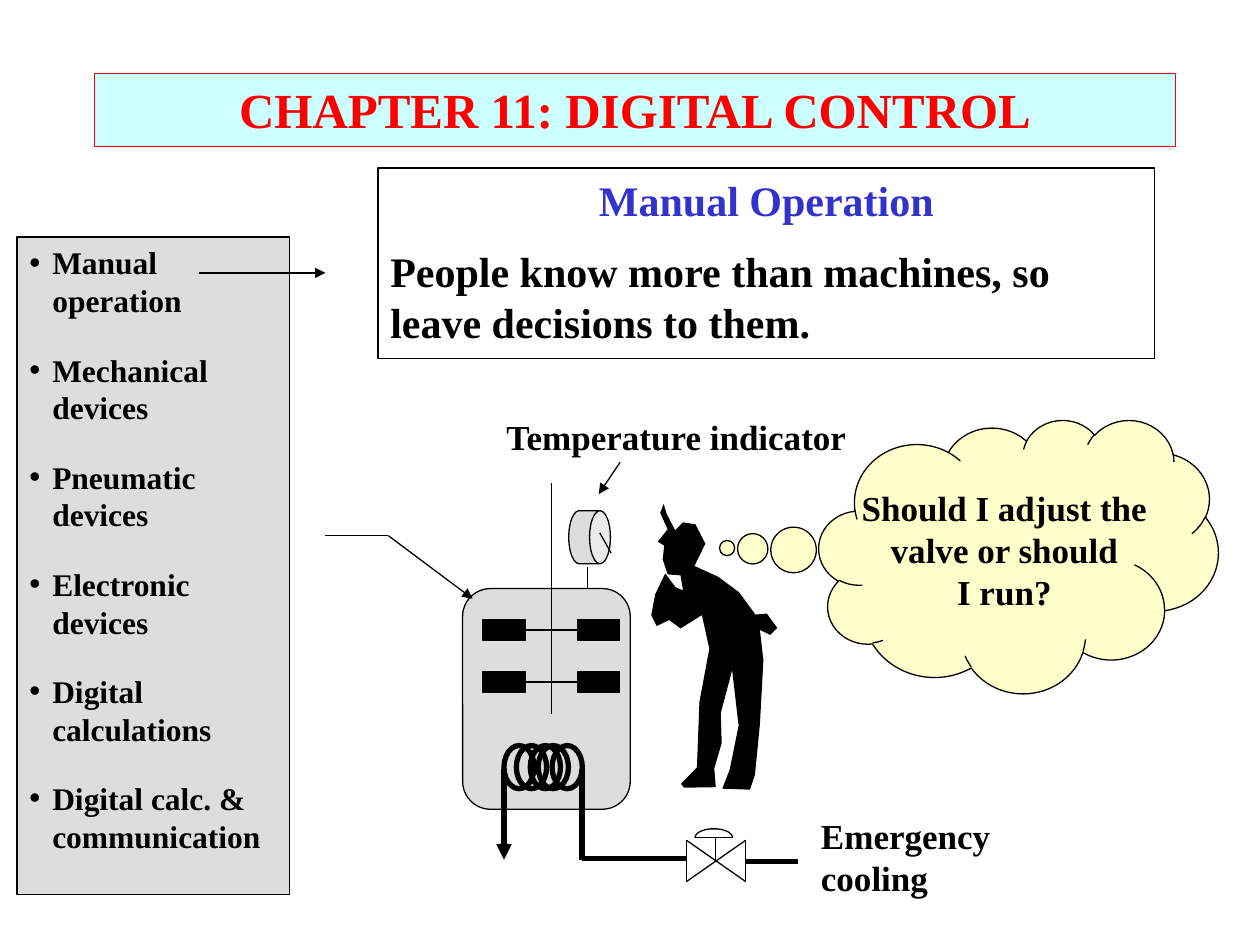
from itertools import combinations
from math import cos, pi, sin
from typing import NamedTuple, Optional

from lxml.etree import SubElement
from pptx import Presentation
from pptx.dml.color import RGBColor
from pptx.enum.shapes import MSO_CONNECTOR, MSO_SHAPE
from pptx.enum.text import MSO_ANCHOR, MSO_AUTO_SIZE, PP_ALIGN
from pptx.oxml.ns import qn
from pptx.util import Cm, Pt

BLACK = RGBColor(0x00, 0x00, 0x00)
RED = RGBColor(0xFF, 0x00, 0x00)
BLUE = RGBColor(0x33, 0x33, 0xCC)
CYAN = RGBColor(0xCC, 0xFF, 0xFF)
GREY = RGBColor(0xDD, 0xDD, 0xDD)
YELLOW = RGBColor(0xFF, 0xFF, 0xCC)
FONT = "Times New Roman"
THIN, MEDIUM, THICK = 0.75, 1.5, 3


class Box(NamedTuple):
    left: float
    top: float
    width: float
    height: float


class Stroke(NamedTuple):
    start: tuple[float, float]
    end: tuple[float, float]
    weight: float = THIN
    arrow: bool = False


class Line(NamedTuple):
    text: str
    color: RGBColor = BLACK
    alignment: PP_ALIGN = PP_ALIGN.LEFT


METHODS = ("Manual operation", "Mechanical devices", "Pneumatic devices",
           "Electronic devices", "Digital calculations", "Digital calc. & communication")
COIL_LEFTS = (10.41, 10.16, 10.69, 10.85, 11.13)
PADDLE_TOPS = (12.49, 13.54)
COIL_OUTLET, COIL_INLET, COIL_MIDDLE, COIL_END = 10.16, 11.73, 15.51, 17.33
VALVE_LEFT, VALVE_RIGHT, VALVE_TOP, VALVE_BOTTOM = 13.84, 15.03, 16.94, 17.77
VALVE_CORNERS = ((VALVE_LEFT, VALVE_TOP), (VALVE_LEFT, VALVE_BOTTOM),
                 (VALVE_RIGHT, VALVE_TOP), (VALVE_RIGHT, VALVE_BOTTOM))
VALVE_SIDES = tuple(Stroke(start, end) for start, end in combinations(VALVE_CORNERS, 2)
                    if start[1] != end[1])
DOME_CENTER, DOME_BASE, DOME_RADIUS, DOME_HEIGHT, DOME_STEPS = 14.39, 16.89, 0.38, 0.18, 16
BEND = (7.83, 10.8)
STROKES = (
    Stroke((4.02, 5.5), (6.56, 5.5), MEDIUM, True),
    Stroke((11.12, 9.74), (11.12, 14.39)),
    Stroke(BEND, (9.53, 12.07), THIN, True),
    Stroke(BEND, (6.56, BEND[1])),
    Stroke((COIL_OUTLET, COIL_MIDDLE), (COIL_OUTLET, COIL_END), THICK, True),
    Stroke((COIL_INLET, COIL_MIDDLE), (COIL_INLET, COIL_END), THICK),
    *VALVE_SIDES,
    Stroke((14.43, 17.35), (14.43, DOME_BASE)),
    Stroke((14.01, DOME_BASE), (14.77, DOME_BASE)),
    Stroke((COIL_INLET, 17.3), (VALVE_LEFT, 17.3), THICK),
    Stroke((VALVE_RIGHT, 17.37), (16.08, 17.37), THICK),
    Stroke((11.85, 11.43), (11.85, 11.86)),
    Stroke((12.09, 10.74), (12.32, 11.15)),
    Stroke((12.5, 9.32), (12.07, 9.96), THIN, True),
)
OUTLINE_UNIT = Cm(0.01)
OPERATOR = (
    (1361, 1069), (1344, 1036), (1338, 1016), (1331, 1034), (1346, 1067), (1326, 1092),
    (1339, 1100), (1336, 1128), (1346, 1158), (1372, 1160), (1377, 1190), (1362, 1184),
    (1341, 1156), (1321, 1198), (1313, 1240), (1324, 1262), (1349, 1250), (1372, 1267),
    (1415, 1240), (1430, 1308), (1410, 1415), (1405, 1547), (1373, 1580), (1379, 1588),
    (1443, 1587), (1440, 1549), (1455, 1498), (1453, 1438), (1476, 1351), (1489, 1463),
    (1471, 1552), (1456, 1590), (1512, 1592), (1522, 1562), (1532, 1460), (1539, 1331),
    (1532, 1270), (1553, 1280), (1567, 1266), (1546, 1237), (1523, 1239), (1490, 1194),
    (1448, 1163), (1400, 1141), (1422, 1096), (1402, 1057), (1377, 1053),
)


def place(shape, box: Box) -> None:
    shape.left, shape.top, shape.width, shape.height = (Cm(value) for value in box)


def paint(shape, fill: Optional[RGBColor], line: Optional[RGBColor] = BLACK,
          weight: float = THIN) -> None:
    if fill is None:
        shape.fill.background()
    else:
        shape.fill.solid()
        shape.fill.fore_color.rgb = fill
    if line is None:
        shape.line.fill.background()
    else:
        shape.line.color.rgb = line
        shape.line.width = Pt(weight)


def draw_shape(slide, kind: MSO_SHAPE, box: Box, fill: Optional[RGBColor] = None,
               weight: float = THIN, rotation: float = 0):
    shape = slide.shapes.add_shape(kind, *(Cm(value) for value in box))
    shape.shadow.inherit = False
    shape.rotation = rotation
    paint(shape, fill, weight=weight)
    return shape


def draw_stroke(slide, stroke: Stroke):
    points = (Cm(value) for value in (*stroke.start, *stroke.end))
    connector = slide.shapes.add_connector(MSO_CONNECTOR.STRAIGHT, *points)
    connector.line.color.rgb = BLACK
    connector.line.width = Pt(stroke.weight)
    properties = connector.element.spPr
    if stroke.arrow:
        SubElement(properties.find(qn("a:ln")), qn("a:tailEnd"), type="triangle")
    SubElement(properties, qn("a:effectLst"))
    return connector


def draw_outline(slide, points, closed: bool, fill: Optional[RGBColor],
                 line: Optional[RGBColor]) -> None:
    builder = slide.shapes.build_freeform(*points[0], scale=OUTLINE_UNIT)
    builder.add_line_segments(points[1:], close=closed)
    shape = builder.convert_to_shape()
    shape.shadow.inherit = False
    paint(shape, fill, line)


def write(shape, lines: list[Line], size: float, gap: float = 0, wrap: bool = True,
          anchor: MSO_ANCHOR = MSO_ANCHOR.TOP) -> None:
    frame = shape.text_frame
    frame.auto_size = MSO_AUTO_SIZE.NONE
    frame.word_wrap = wrap
    frame.vertical_anchor = anchor
    for index, line in enumerate(lines):
        paragraph = frame.add_paragraph() if index else frame.paragraphs[0]
        paragraph.text = line.text
        paragraph.alignment = line.alignment
        paragraph.space_before = Pt(gap if index else 0)
        paragraph.font.name = FONT
        paragraph.font.size = Pt(size)
        paragraph.font.bold = True
        paragraph.font.color.rgb = line.color


def draw_label(slide, box: Box, text: str) -> None:
    label = slide.shapes.add_textbox(*(Cm(value) for value in box))
    write(label, [Line(text)], 20)


def draw_paddles(slide, top: float) -> None:
    left, right = (draw_shape(slide, MSO_SHAPE.RECTANGLE, Box(x, top, 0.85, 0.42), BLACK)
                   for x in (9.74, 11.64))
    shaft = draw_stroke(slide, Stroke((10.59, top + 0.21), (11.64, top + 0.21)))
    shaft.begin_connect(left, 3)
    shaft.end_connect(right, 1)


def main() -> None:
    presentation = Presentation()
    presentation.slide_width, presentation.slide_height = Cm(25.4), Cm(19.05)
    slide = presentation.slides.add_slide(presentation.slide_layouts[1])

    title, methods = slide.shapes.title, slide.placeholders[1]
    place(title, Box(1.9, 1.48, 21.8, 1.48))
    paint(title, CYAN, RED)
    write(title, [Line("CHAPTER 11: DIGITAL CONTROL", RED, PP_ALIGN.CENTER)], 28)
    place(methods, Box(0.34, 4.78, 5.5, 13.26))
    paint(methods, GREY)
    write(methods, [Line(text) for text in METHODS], 18, gap=18)
    for paragraph in methods.text_frame.paragraphs:
        properties = paragraph._p.get_or_add_pPr()
        properties.set("marL", str(Cm(0.46)))
        properties.set("indent", str(-Cm(0.46)))

    statement = draw_shape(slide, MSO_SHAPE.RECTANGLE, Box(7.62, 3.39, 15.66, 3.84))
    write(statement, [Line("Manual Operation", BLUE, PP_ALIGN.CENTER),
                      Line("People know more than machines, so leave decisions to them.")], 24, gap=12)

    draw_shape(slide, MSO_SHAPE.ROUNDED_RECTANGLE, Box(8.79, 12.4, 4.45, 3.38), GREY, rotation=90)
    indicator = draw_shape(slide, MSO_SHAPE.CAN, Box(11.35, 10.41, 1.07, 0.84), GREY, rotation=90)
    indicator.adjustments[0] = 0.5
    for top in PADDLE_TOPS:
        draw_paddles(slide, top)
    for left in COIL_LEFTS:
        draw_shape(slide, MSO_SHAPE.FLOWCHART_CONNECTOR, Box(left, 15.03, 0.61, 0.87), weight=THICK)
    for stroke in STROKES:
        draw_stroke(slide, stroke)
    angles = [pi * step / DOME_STEPS for step in range(DOME_STEPS + 1)]
    dome = [(100 * (DOME_CENTER + DOME_RADIUS * cos(angle)),
             100 * (DOME_BASE - DOME_HEIGHT * sin(angle))) for angle in angles]
    draw_outline(slide, dome, False, None, BLACK)
    draw_outline(slide, OPERATOR, True, BLACK, None)

    draw_label(slide, Box(16.3, 16.3, 4.24, 1.96), "Emergency cooling")
    draw_label(slide, Box(9.96, 8.26, 8.26, 1.09), "Temperature indicator")
    thought = draw_shape(slide, MSO_SHAPE.CLOUD_CALLOUT, Box(16.51, 8.46, 8.05, 5.51), YELLOW)
    thought.adjustments[0], thought.adjustments[1] = -0.73, -0.03
    write(thought, [Line(text, BLACK, PP_ALIGN.CENTER) for text in
                    ("Should I adjust the", "valve or should", "I run?")],
          20, wrap=False, anchor=MSO_ANCHOR.MIDDLE)

    presentation.save("out.pptx")


if __name__ == "__main__":
    main()
